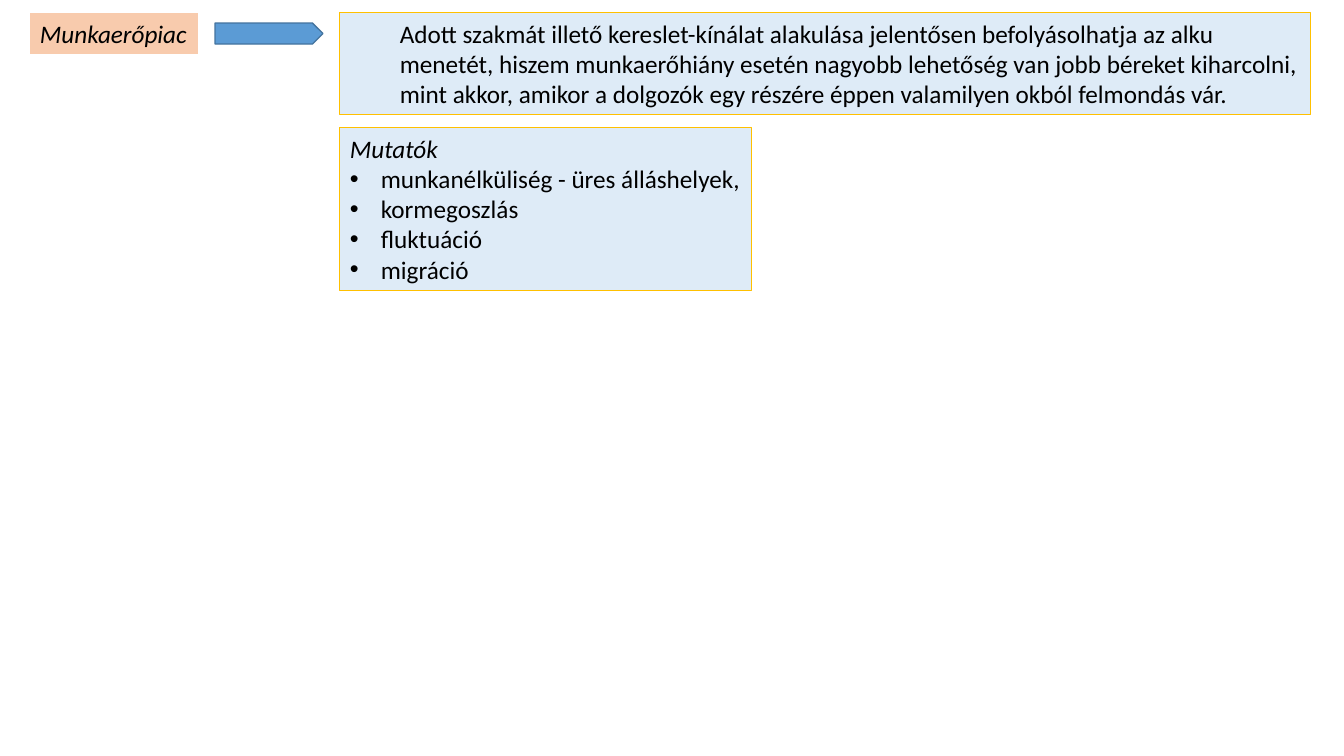
from lxml.etree import SubElement
from pptx import Presentation
from pptx.dml.color import RGBColor
from pptx.enum.shapes import MSO_SHAPE
from pptx.enum.text import MSO_ANCHOR, MSO_AUTO_SIZE, PP_ALIGN
from pptx.oxml.ns import qn
from pptx.util import Emu, Pt

EMU_PER_PX = 914400 / 100.8
FONT_NAME = "Calibri"
FONT_SIZE = 18
COLORS = {
    "label": "F8CBAD",
    "panel": "DEEBF7",
    "panel_line": "FFC000",
    "arrow": "5B9BD5",
    "arrow_line": "43739E",
    "text": "000000",
}


def px(length):
    return Emu(round(length * EMU_PER_PX))


def color(name):
    return RGBColor.from_string(COLORS[name])


def add_filled_shape(slide, kind, box, fill, line=None, line_width=0.75):
    shape = slide.shapes.add_shape(kind, *map(px, box))
    shape.shadow.inherit = False
    shape.fill.solid()
    shape.fill.fore_color.rgb = color(fill)
    if line:
        shape.line.color.rgb = color(line)
        shape.line.width = Pt(line_width)
    else:
        shape.line.fill.background()
    return shape


def add_text_panel(slide, box, fill, lines, line=None, wrap=True):
    shape = add_filled_shape(slide, MSO_SHAPE.RECTANGLE, box, fill, line)
    text_frame = shape.text_frame
    text_frame.word_wrap = wrap
    text_frame.auto_size = MSO_AUTO_SIZE.SHAPE_TO_FIT_TEXT
    text_frame.vertical_anchor = MSO_ANCHOR.TOP
    text_frame.text = "\n".join(lines)
    for paragraph in text_frame.paragraphs:
        paragraph.alignment = PP_ALIGN.LEFT
        for run in paragraph.runs:
            run.font.name = FONT_NAME
            run.font.size = Pt(FONT_SIZE)
            run.font.color.rgb = color("text")
    return text_frame.paragraphs


def set_indent(paragraph, left, first_line=0):
    properties = paragraph._p.get_or_add_pPr()
    properties.set("marL", str(px(left)))
    properties.set("indent", str(px(first_line)))
    return properties


def add_bullet(paragraph):
    properties = set_indent(paragraph, 31, -31)
    SubElement(properties, qn("a:buFont"), typeface="Arial")
    SubElement(properties, qn("a:buChar"), char="•")


def set_italic(paragraph):
    for run in paragraph.runs:
        run.font.italic = True


def main():
    presentation = Presentation()
    presentation.slide_width = px(1344)
    presentation.slide_height = px(756)
    slide = presentation.slides.add_slide(presentation.slide_layouts[6])

    # Topic label
    label = add_text_panel(slide, (30, 13, 168, 41), "label",
                           ["Munkaerőpiac"], wrap=False)
    set_italic(label[0])

    # Arrow from the label to the explanation
    arrow = add_filled_shape(slide, MSO_SHAPE.RIGHT_ARROW, (215, 23, 108, 21),
                             "arrow", "arrow_line", 1)
    arrow.adjustments[0] = 1
    arrow.adjustments[1] = 0.5

    # Explanation
    explanation = add_text_panel(slide, (340, 13, 971, 102), "panel", [
        "Adott szakmát illető kereslet-kínálat alakulása jelentősen "
        "befolyásolhatja az alku menetét, hiszem munkaerőhiány esetén "
        "nagyobb lehetőség van jobb béreket kiharcolni, mint akkor, amikor "
        "a dolgozók egy részére éppen valamilyen okból felmondás vár.",
    ], "panel_line")
    set_indent(explanation[0], 50)

    # Indicators
    heading, *indicators = add_text_panel(slide, (340, 128, 412, 163), "panel", [
        "Mutatók",
        "munkanélküliség - üres álláshelyek,",
        "kormegoszlás",
        "fluktuáció",
        "migráció",
    ], "panel_line")
    set_italic(heading)
    for indicator in indicators:
        add_bullet(indicator)

    presentation.save("out.pptx")


if __name__ == "__main__":
    main()
